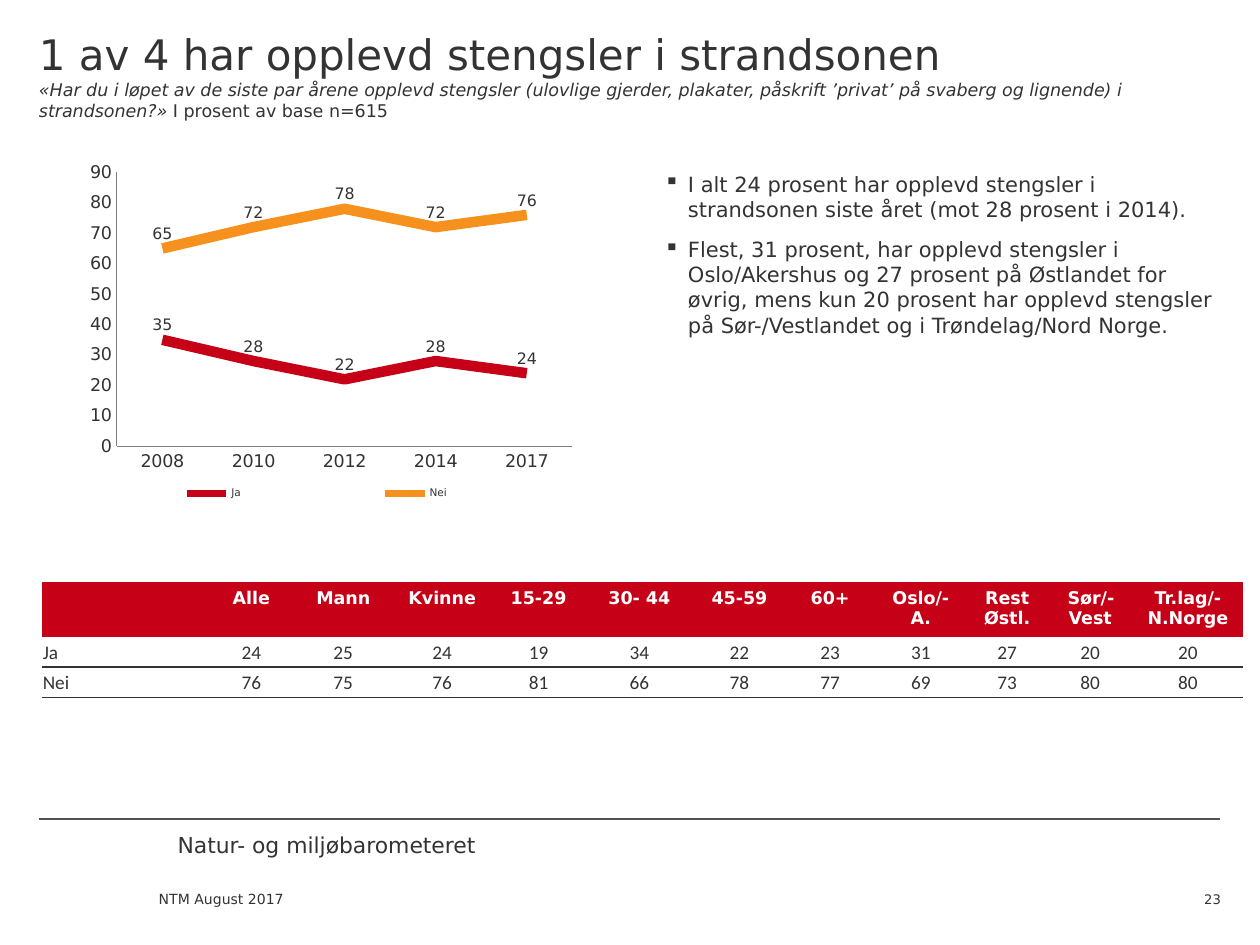
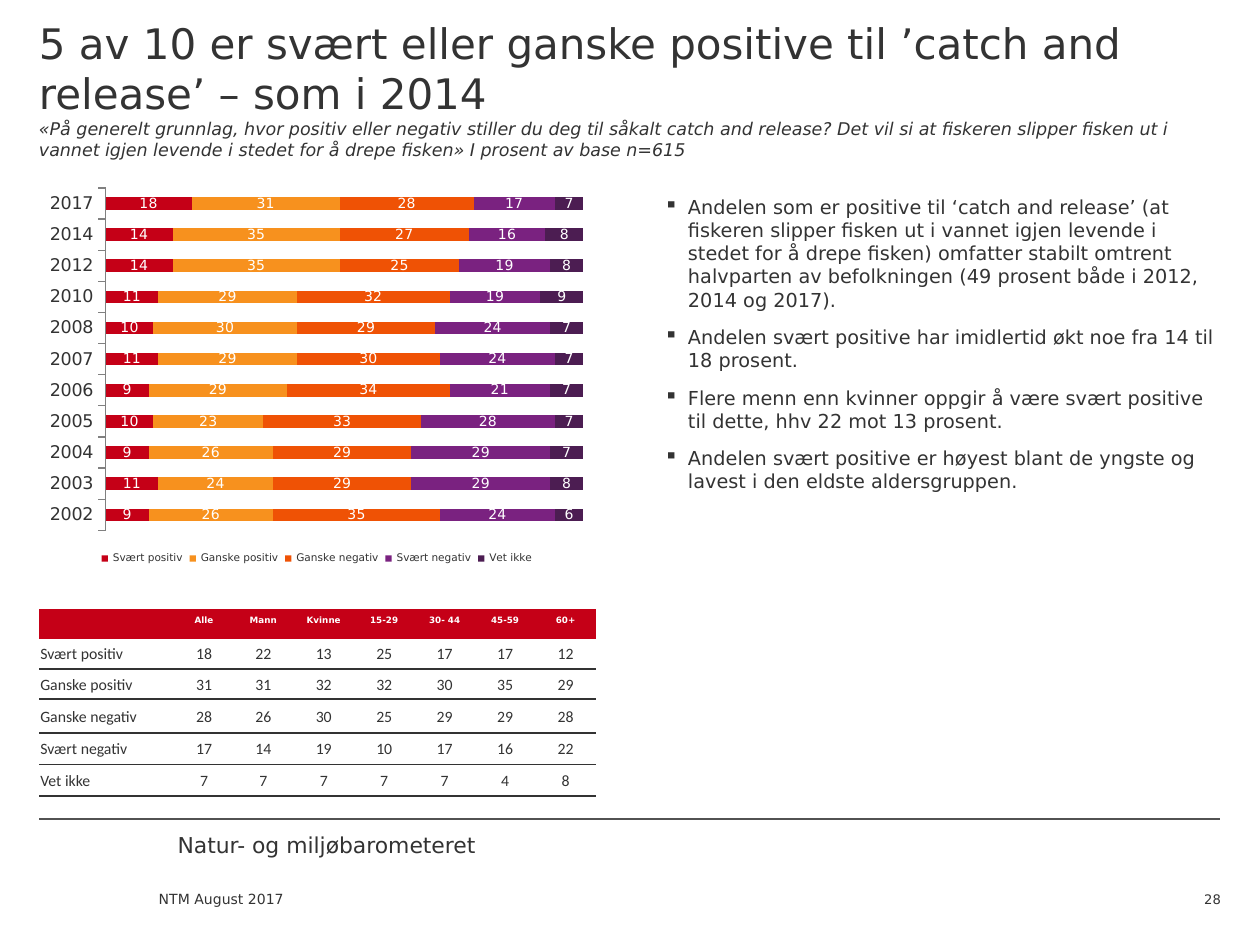
import pptx
import pptx.chart.data
import pptx.dml.color
import pptx.enum.chart
import pptx.enum.shapes
import pptx.enum.text
import pptx.oxml
import pptx.util
from lxml import etree

# Shared look
FONT, TABLE_FONT = "DejaVu Sans", "Calibri"
INK, WHITE, GREY, RULE = "333333", "FFFFFF", "808080", "525252"
RED, AMBER, ORANGE, PURPLE, PLUM = "C50017", "F7911E", "EF5205", "7A2280", "4C1D52"
NO_TABLE_STYLE = "{2D5ABB26-0587-4C30-8999-92F81FD0307C}"

# Two-column grid, in inches
SLIDE_WIDTH, SLIDE_HEIGHT = 10, 7.5
LEFT, RIGHT = 0.31, 9.68
COLUMN = 4.41
SECOND_COLUMN = RIGHT - COLUMN
TOP_INSET = 0.23

inches = pptx.util.Inches
points = pptx.util.Pt
align = pptx.enum.text.PP_ALIGN
anchor = pptx.enum.text.MSO_ANCHOR
chart_type = pptx.enum.chart.XL_CHART_TYPE
label_position = pptx.enum.chart.XL_LABEL_POSITION
tick_mark = pptx.enum.chart.XL_TICK_MARK


def color(hex_string):
    return pptx.dml.color.RGBColor.from_string(hex_string)


def set_font(font, size, hex_string=INK, name=FONT, bold=False, italic=False):
    font.name, font.size = name, points(size)
    font.bold, font.italic = bold, italic
    font.color.rgb = color(hex_string)


def set_line(line, hex_string, width):
    line.color.rgb = color(hex_string)
    line.width = points(width)


def add_text_frame(slide, left, top, width, height, top_inset=0):
    box = slide.shapes.add_textbox(*map(inches, (left, top, width, height)))
    frame = box.text_frame
    frame.word_wrap = True
    frame.margin_left = frame.margin_right = frame.margin_bottom = 0
    frame.margin_top = inches(top_inset)
    return frame


def add_line_of_text(slide, text, left, top, width, height, size):
    frame = add_text_frame(slide, left, top, width, height)
    paragraph = frame.paragraphs[0]
    paragraph.text = text
    set_font(paragraph.font, size)
    return frame


def add_footer(slide, number):
    rule = slide.shapes.add_connector(
        pptx.enum.shapes.MSO_CONNECTOR.STRAIGHT,
        *map(inches, (LEFT, 6.5, RIGHT, 6.5)))
    set_line(rule.line, RULE, 0.75)
    etree.SubElement(rule._element.spPr, pptx.oxml.ns.qn("a:effectLst"))
    add_line_of_text(slide, "Natur- og miljøbarometeret", 1.41, 6.6, 3.31, 0.42, 12.5)
    add_line_of_text(slide, "NTM August 2017", 1.26, 7.07, 3.19, 0.33, 8)
    frame = add_line_of_text(slide, str(number), RIGHT - 0.54, 6.92, 0.55, 0.28, 7.5)
    frame.vertical_anchor = anchor.BOTTOM
    frame.paragraphs[0].alignment = align.RIGHT


def add_title(slide, top, title, question, base, base_italic):
    frame = add_text_frame(slide, LEFT, top, RIGHT - LEFT, 1.13, TOP_INSET)
    paragraph = frame.paragraphs[0]
    run = paragraph.add_run()
    run.text = title
    set_font(run.font, 24)
    paragraph.add_line_break()
    for text, italic in ((question + " ", True), (base, base_italic)):
        run = paragraph.add_run()
        run.text = text
        set_font(run.font, 10, italic=italic)


def add_bullets(slide, top, size, texts):
    frame = add_text_frame(slide, SECOND_COLUMN, top, COLUMN, 5.25, TOP_INSET)
    for index, text in enumerate(texts):
        paragraph = frame.add_paragraph() if index else frame.paragraphs[0]
        paragraph.text = text
        properties = paragraph._p.get_or_add_pPr()
        properties.set("marL", str(inches(0.19)))
        properties.set("indent", str(-inches(0.19)))
        paragraph.space_after = points(6)
        if index:
            paragraph.space_before = points(0.2 * size)
        bullet = etree.SubElement(properties, pptx.oxml.ns.qn("a:buChar"))
        bullet.set("char", "▪")
        set_font(paragraph.font, size)


def set_layout(parent, left, top, width, height, inner=False):
    """Place a chart part by shares of the chart's size."""
    target = '<c:layoutTarget val="inner"/>' if inner else ""
    sizes = "".join(f'<c:{tag} val="{value}"/>' for tag, value in
                    zip("xywh", (left, top, width, height)))
    layout = pptx.oxml.parse_xml(
        '<c:layout xmlns:c="http://schemas.openxmlformats.org/drawingml/2006/chart">'
        f'<c:manualLayout>{target}<c:xMode val="edge"/><c:yMode val="edge"/>{sizes}'
        '</c:manualLayout></c:layout>')
    for existing in parent.findall(pptx.oxml.ns.qn("c:layout")):
        parent.remove(existing)
    parent.insert(1 if parent.tag.endswith("legend") else 0, layout)


def add_chart(slide, kind, top, height, categories, series, plot_area):
    """Add a chart whose series are (name, colour, values)."""
    data = pptx.chart.data.CategoryChartData(number_format="0")
    data.categories = categories
    for name, _, values in series:
        data.add_series(name, values)
    chart = slide.shapes.add_chart(
        kind, *map(inches, (LEFT, top, COLUMN, height)), data).chart
    set_font(chart.font, 10)
    chart.has_title = False
    chart.has_legend = True
    chart.legend.position = pptx.enum.chart.XL_LEGEND_POSITION.BOTTOM
    chart.legend.include_in_layout = False
    set_font(chart.legend.font, 6)
    chart.plots[0].vary_by_categories = False
    for axis in (chart.category_axis, chart.value_axis):
        axis.has_major_gridlines = False
        axis.major_tick_mark = axis.minor_tick_mark = tick_mark.NONE
        set_font(axis.tick_labels.font, 10)
        set_line(axis.format.line, GREY, 0.75)
    set_layout(chart._chartSpace.chart.plotArea, *plot_area, inner=True)
    return chart


def add_labels(series, size, hex_string, position):
    labels = series.data_labels
    labels.show_value = True
    labels.position = position
    set_font(labels.font, size, hex_string)


def add_line_chart(slide, categories, series):
    chart = add_chart(slide, chart_type.LINE, 1.13, 3.4, categories, series,
                      (0.14, 0.07, 0.82, 0.64))
    axis = chart.value_axis
    axis.minimum_scale, axis.maximum_scale, axis.major_unit = 0, 90, 10
    for line, (_, hex_string, _) in zip(chart.plots[0].series, series):
        line.smooth = False
        line.marker.style = pptx.enum.chart.XL_MARKER_STYLE.NONE
        set_line(line.format.line, hex_string, 6)
        add_labels(line, 9, INK, label_position.ABOVE)
    set_layout(chart.legend._element, 0.01, 0.78, 0.98, 0.08)


def add_stacked_bars(slide, categories, series):
    chart = add_chart(slide, chart_type.BAR_STACKED, 1.43, 3.09, categories, series,
                      (0.12, 0.02, 0.86, 0.88))
    plot, axis = chart.plots[0], chart.value_axis
    plot.gap_width, plot.overlap = 150, 100
    axis.minimum_scale, axis.maximum_scale = 0, 100
    axis.visible = False
    chart.category_axis.reverse_order = True
    chart.category_axis.major_tick_mark = tick_mark.OUTSIDE
    for bars, (_, hex_string, _) in zip(plot.series, series):
        bars.format.fill.solid()
        bars.format.fill.fore_color.rgb = color(hex_string)
        add_labels(bars, 8, WHITE, label_position.CENTER)


def underline_cell(cell):
    border = pptx.oxml.parse_xml(
        '<a:lnB xmlns:a="http://schemas.openxmlformats.org/drawingml/2006/main" '
        f'w="{points(1)}"><a:solidFill><a:srgbClr val="{INK}"/></a:solidFill></a:lnB>')
    cell._tc.get_or_add_tcPr().insert(0, border)


def fill_cell(cell, text, is_header, is_label, size):
    cell.fill.solid()
    cell.fill.fore_color.rgb = color(RED if is_header else WHITE)
    paragraph = cell.text_frame.paragraphs[0]
    if not is_label:
        paragraph.alignment = align.CENTER
    if text:
        paragraph.text = text
    else:
        ending = etree.SubElement(paragraph._p, pptx.oxml.ns.qn("a:endParaRPr"))
        ending.set("sz", str(size * 100))
    if is_header:
        set_font(paragraph.font, size, WHITE, bold=True)
    else:
        set_font(paragraph.font, size, name=TABLE_FONT)
        cell.vertical_anchor = anchor.MIDDLE
        cell.margin_left = cell.margin_right = cell.margin_top = inches(0.01)
        cell.margin_bottom = 0
        underline_cell(cell)


def add_table(slide, left, top, widths, heights, rows, header_size, body_size):
    frame = slide.shapes.add_table(
        len(rows), len(widths),
        *map(inches, (left, top, sum(widths), sum(heights))))
    table = frame.table
    table.first_row = table.horz_banding = False
    table._tbl.tblPr.find(pptx.oxml.ns.qn("a:tableStyleId")).text = NO_TABLE_STYLE
    for column, width in zip(table.columns, widths):
        column.width = inches(width)
    for row, height in zip(table.rows, heights):
        row.height = inches(height)
    for row_index, row in enumerate(rows):
        size = body_size if row_index else header_size
        for column_index, value in enumerate(row):
            fill_cell(table.cell(row_index, column_index), str(value),
                      row_index == 0, column_index == 0, size)


GROUPS = ["", "Alle", "Mann", "Kvinne", "15-29", "30- 44", "45-59", "60+"]
REGIONS = ["Oslo/-A.", "Rest Østl.", "Sør/-Vest", "Tr.lag/-N.Norge"]


def build_shoreline_slide(slide):
    add_footer(slide, 23)
    add_title(slide, 0, "1 av 4 har opplevd stengsler i strandsonen",
              "«Har du i løpet av de siste par årene opplevd stengsler (ulovlige gjerder, "
              "plakater, påskrift ’privat’ på svaberg og lignende) i strandsonen?»",
              "I prosent av base n=615", base_italic=False)
    add_bullets(slide, 1.13, 12, [
        "I alt 24 prosent har opplevd stengsler i strandsonen siste året "
        "(mot 28 prosent i 2014).",
        "Flest, 31 prosent, har opplevd stengsler i Oslo/Akershus og 27 prosent på "
        "Østlandet for øvrig, mens kun 20 prosent har opplevd stengsler på "
        "Sør-/Vestlandet og i Trøndelag/Nord Norge."])
    add_line_chart(slide, ["2008", "2010", "2012", "2014", "2017"], [
        ("Ja", RED, (35, 28, 22, 28, 24)),
        ("Nei", AMBER, (65, 72, 78, 72, 76))])
    yes = [24, 25, 24, 19, 34, 22, 23, 31, 27, 20, 20]
    add_table(slide, 0.33, 4.62,
              [1.32, 0.69, 0.77, 0.8, 0.73, 0.87, 0.72, 0.72, 0.72, 0.65, 0.67, 0.88],
              [0.42, 0.24, 0.24],
              [GROUPS + REGIONS, ["Ja"] + yes, ["Nei"] + [100 - share for share in yes]],
              10, 11)


def build_catch_and_release_slide(slide):
    add_footer(slide, 28)
    add_title(slide, -0.09,
              "5 av 10 er svært eller ganske positive til ’catch and release’ – som i 2014",
              "«På generelt grunnlag, hvor positiv eller negativ stiller du deg til såkalt "
              "catch and release? Det vil si at fiskeren slipper fisken ut i vannet igjen "
              "levende i stedet for å drepe fisken»",
              "I prosent av base n=615", base_italic=True)
    add_bullets(slide, 1.32, 11, [
        "Andelen som er positive til ‘catch and release’ (at fiskeren slipper fisken ut i "
        "vannet igjen levende i stedet for å drepe fisken) omfatter stabilt omtrent "
        "halvparten av befolkningen (49 prosent både i 2012, 2014 og 2017).",
        "Andelen svært positive har imidlertid økt noe fra 14 til 18 prosent.",
        "Flere menn enn kvinner oppgir å være svært positive til dette, "
        "hhv 22 mot 13 prosent.",
        "Andelen svært positive er høyest blant de yngste og lavest i den eldste "
        "aldersgruppen."])
    years = ["2017", "2014", "2012"] + [str(year) for year in (2010, *range(2008, 2001, -1))]
    answers = [
        ("Svært positiv", RED, (18, 14, 14, 11, 10, 11, 9, 10, 9, 11, 9)),
        ("Ganske positiv", AMBER, (31, 35, 35, 29, 30, 29, 29, 23, 26, 24, 26)),
        ("Ganske negativ", ORANGE, (28, 27, 25, 32, 29, 30, 34, 33, 29, 29, 35)),
        ("Svært negativ", PURPLE, (17, 16, 19, 19, 24, 24, 21, 28, 29, 29, 24)),
        ("Vet ikke", PLUM, (7, 8, 8, 9, 7, 7, 7, 7, 7, 8, 6))]
    add_stacked_bars(slide, years, answers)
    shares = [(18, 22, 13, 25, 17, 17, 12), (31, 31, 32, 32, 30, 35, 29),
              (28, 26, 30, 25, 29, 29, 28), (17, 14, 19, 10, 17, 16, 22),
              (7, 7, 7, 7, 7, 4, 8)]
    rows = [[answer[0], *values] for answer, values in zip(answers, shares)]
    add_table(slide, LEFT, 4.83, [1.08, 0.46] + [0.48] * 6,
              [0.24, 0.24, 0.24, 0.27, 0.25, 0.25], [GROUPS] + rows, 5, 9)


def main():
    presentation = pptx.Presentation()
    presentation.slide_width = inches(SLIDE_WIDTH)
    presentation.slide_height = inches(SLIDE_HEIGHT)
    blank = presentation.slide_layouts[6]
    for build in (build_shoreline_slide, build_catch_and_release_slide):
        build(presentation.slides.add_slide(blank))
    presentation.save("out.pptx")


if __name__ == "__main__":
    main()
